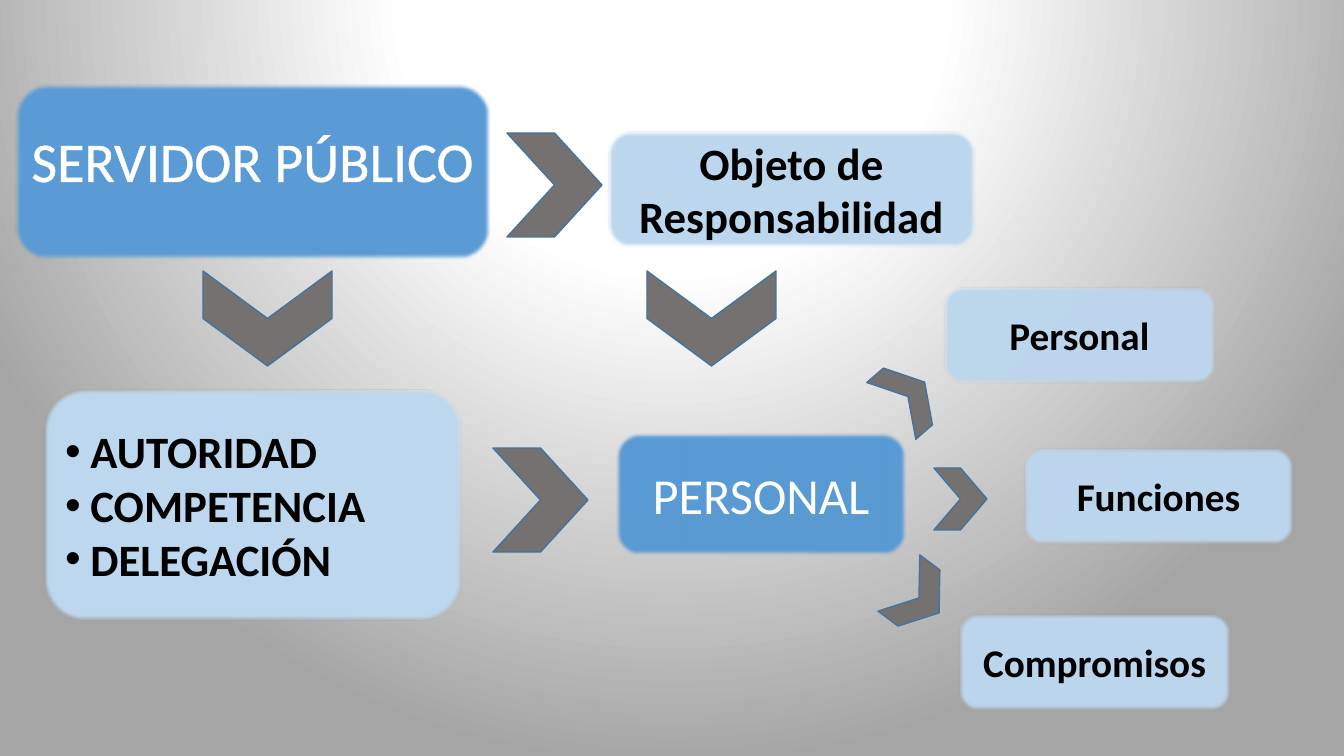
from lxml import etree
from pptx import Presentation
from pptx.dml.color import RGBColor
from pptx.enum import shapes, text
from pptx.oxml import ns, parse_xml
from pptx import util as u

PX = 12192000 / 1344
KIND = shapes.MSO_SHAPE
MID = text.PP_ALIGN.CENTER
BLUE, PALE, GREY, EDGE = "5B9BD5", "BDD7EE", "767171", "43739E"
BLACK, WHITE = "000000", "FFFFFF"

# text, place, fill, format
BOXES = [
    ("", (15, 84, 475, 175), BLUE, {}),
    ("Funciones", (1024, 448, 269, 96), PALE, {"size": 28, "bold": True}),
    ("PERSONAL", (616, 433, 290, 122), BLUE, {"size": 36}),
    ("AUTORIDAD\nCOMPETENCIA\nDELEGACIÓN", (44, 389, 417, 231), PALE,
     {"size": 32, "bold": True}),
    ("Objeto de Responsabilidad", (608, 131, 367, 116), PALE,
     {"size": 32, "bold": True}),
    ("Compromisos", (959, 614, 271, 96), PALE, {"size": 28, "bold": True}),
    ("Personal", (944, 287, 271, 96), PALE, {"size": 28, "bold": True}),
]
# place, turn in degrees
ARROWS = [
    ((507, 133, 95, 104), 0),
    ((220, 254, 95, 129), 90),
    ((493, 448, 95, 104), 0),
    ((894, 563, 50, 70), 36.6),
    ((886, 359, 44, 75), 319.2),
    ((934, 468, 53, 62), 0),
    ((664, 254, 95, 129), 90),
]


def emu(*nums):
    return [u.Emu(round(n * PX)) for n in nums]


def color(code):
    return RGBColor.from_string(code)


def add(parent, tag, **attrs):
    return etree.SubElement(parent, ns.qn(tag), attrs)


def backdrop(slide):
    """Radial gradient centred above the slide."""
    slide.background.fill.solid()
    stops = "".join(
        f'<a:gs pos="{pos}"><a:srgbClr val="{code}"/></a:gs>'
        for pos, code in ((0, WHITE), (35000, WHITE), (100000, "A5A5A5")))
    grad = parse_xml(
        f'<a:gradFill {ns.nsdecls("a")} rotWithShape="1">'
        f'<a:gsLst>{stops}</a:gsLst><a:path path="circle">'
        '<a:fillToRect l="50000" t="-80000" r="50000" b="180000"/>'
        '</a:path></a:gradFill>')
    props = slide.element.find(".//" + ns.qn("p:bgPr"))
    props.replace(props[0], grad)


def shape(slide, kind, place, fill):
    item = slide.shapes.add_shape(kind, *emu(*place))
    item.shadow.inherit = False
    item.fill.solid()
    item.fill.fore_color.rgb = color(fill)
    item.line.color.rgb = color(EDGE)
    item.line.width = u.Pt(1)
    return item


def style(font, code, size, **form):
    form |= {"name": "Calibri", "size": u.Pt(size)}
    for key, val in form.items():
        setattr(font, key, val)
    font.color.rgb = color(code)


def bullet(para):
    props = para._p.get_or_add_pPr()
    props.set("marL", "228600")
    props.set("indent", "-228600")
    add(props, "a:buFont", typeface="Arial")
    add(props, "a:buChar", char="•")


def box(slide, words, place, fill, form):
    """Rounded box with soft edges; several lines become bullets."""
    item = shape(slide, KIND.ROUNDED_RECTANGLE, place, fill)
    soft = item._element.spPr.find(ns.qn("a:effectLst"))
    add(soft, "a:softEdge", rad="31750")
    if not words:
        return
    frame = item.text_frame
    frame.word_wrap = True
    frame.vertical_anchor = text.MSO_ANCHOR.MIDDLE
    lines = words.split("\n")
    for num, line in enumerate(lines):
        para = frame.add_paragraph() if num else frame.paragraphs[0]
        para.alignment = MID if len(lines) == 1 else text.PP_ALIGN.LEFT
        if len(lines) > 1:
            bullet(para)
        run = para.add_run()
        run.text = line
        style(run.font, WHITE if fill == BLUE else BLACK, **form)


def arrow(slide, place, turn):
    shape(slide, KIND.CHEVRON, place, GREY).rotation = turn


def title(slide, words, place):
    frame = slide.shapes.add_textbox(*emu(*place)).text_frame
    frame.word_wrap = True
    frame.auto_size = text.MSO_AUTO_SIZE.SHAPE_TO_FIT_TEXT
    para = frame.paragraphs[0]
    para.alignment = MID
    run = para.add_run()
    run.text = words
    style(run.font, WHITE, 40)
    line = parse_xml(
        f'<a:ln {ns.nsdecls("a")} w="18415"><a:solidFill>'
        f'<a:srgbClr val="{WHITE}"/></a:solidFill></a:ln>')
    run._r.get_or_add_rPr().insert(0, line)


def main():
    deck = Presentation()
    deck.slide_width, deck.slide_height = emu(1344, 756)
    slide = deck.slides.add_slide(deck.slide_layouts[6])
    backdrop(slide)
    for row in BOXES:
        box(slide, *row)
    for row in ARROWS:
        arrow(slide, *row)
    title(slide, "SERVIDOR PÚBLICO", (15, 121, 475, 78))
    deck.save("out.pptx")


if __name__ == "__main__":
    main()
